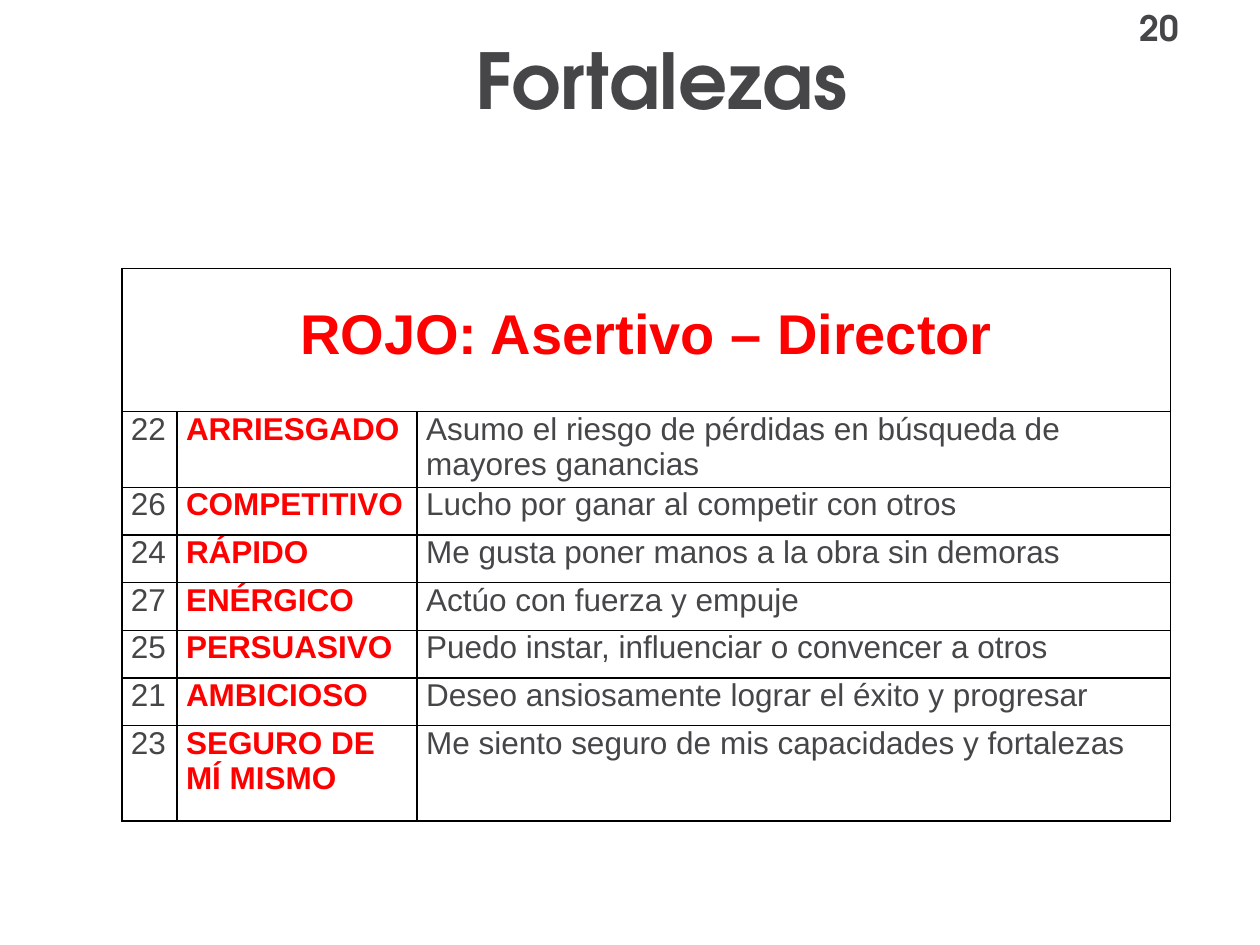
import pptx
import pptx.dml.color
import pptx.enum.text
import pptx.oxml.ns
import pptx.util
from lxml import etree

Cm, Pt = pptx.util.Cm, pptx.util.Pt
ALIGN = pptx.enum.text.PP_ALIGN
ANCHOR = pptx.enum.text.MSO_ANCHOR

# Content
TITLE = "Fortalezas"
PAGE = "20"
HEAD = "ROJO: Asertivo – Director"
ROWS = [
    ("22", "ARRIESGADO", "Asumo el riesgo de pérdidas en búsqueda de mayores ganancias"),
    ("26", "COMPETITIVO", "Lucho por ganar al competir con otros"),
    ("24", "RÁPIDO", "Me gusta poner manos a la obra sin demoras"),
    ("27", "ENÉRGICO", "Actúo con fuerza y empuje"),
    ("25", "PERSUASIVO", "Puedo instar, influenciar o convencer a otros"),
    ("21", "AMBICIOSO", "Deseo ansiosamente lograr el éxito y progresar"),
    ("23", "SEGURO DE MÍ MISMO", "Me siento seguro de mis capacidades y fortalezas"),
]

# Theme and measures (lengths in cm, type in points)
THEME = {
    "show": "TeX Gyre Adventor", "body": "Arial",
    "gray": "464649", "red": "FF0000", "line": "000000",
    "title": 44, "head": 32, "page": 20, "text": 18, "rule": 1,
}
COLS = [1.11, 4.84, 15.19]
HIGH = [2.89, 1.42] + [0.96] * (len(ROWS) - 2) + [1.93]
PAD = 0.18
DROP = 0.71


def style(frame, face, size, color, bold, align=ALIGN.LEFT):
    for para in frame.paragraphs:
        para.alignment = align
        para.space_before = para.space_after = Pt(0)
        for run in para.runs:
            font = run.font
            font.name = THEME[face]
            font.size = Pt(THEME[size])
            font.bold = bold
            font.color.rgb = pptx.dml.color.RGBColor.from_string(THEME[color])


def border(cell):
    props = cell._tc.get_or_add_tcPr()
    qn = pptx.oxml.ns.qn
    for side in ("lnL", "lnR", "lnT", "lnB"):
        line = etree.SubElement(props, qn("a:" + side), w=str(Pt(THEME["rule"])))
        fill = etree.SubElement(line, qn("a:solidFill"))
        etree.SubElement(fill, qn("a:srgbClr"), val=THEME["line"])


def place(shape, left, top, width, height):
    shape.left, shape.top = Cm(left), Cm(top)
    shape.width, shape.height = Cm(width), Cm(height)


deck = pptx.Presentation()
deck.slide_width, deck.slide_height = Cm(25.4), Cm(19.05)
slide = deck.slides.add_slide(deck.slide_layouts.get_by_name("Title Only"))

# Title
title = slide.shapes.title
place(title, 1.91, 0, 22.86, 3.18)
title.text_frame.text = TITLE
title.text_frame.vertical_anchor = ANCHOR.MIDDLE
style(title.text_frame, "show", "title", "gray", True, ALIGN.CENTER)

# Page number
page = slide.shapes.add_textbox(Cm(22.72), 0, Cm(2.39), Cm(1.12))
page.text_frame.word_wrap = True
page.text_frame.text = PAGE
style(page.text_frame, "show", "page", "gray", True)

# Table grid
grid = slide.shapes.add_table(len(HIGH), len(COLS), Cm(2.46), Cm(5.41),
                              Cm(sum(COLS)), Cm(sum(HIGH))).table
grid.first_row = grid.horz_banding = False
for col, width in zip(grid.columns, COLS):
    col.width = Cm(width)
for row, height in zip(grid.rows, HIGH):
    row.height = Cm(height)
for cell in grid.iter_cells():
    border(cell)
    cell.fill.background()
    cell.margin_left = cell.margin_right = Cm(PAD)
    cell.margin_top = cell.margin_bottom = 0

# Heading row
head = grid.cell(0, 0)
head.merge(grid.cell(0, len(COLS) - 1))
head.margin_top = Cm(DROP)
head.text_frame.text = HEAD
style(head.text_frame, "body", "head", "red", True, ALIGN.CENTER)

# Strengths
for r, row in enumerate(ROWS, 1):
    for c, text in enumerate(row):
        frame = grid.cell(r, c).text_frame
        frame.text = text
        name = c == 1
        style(frame, "body", "text", "red" if name else "gray", name)

deck.save("out.pptx")
